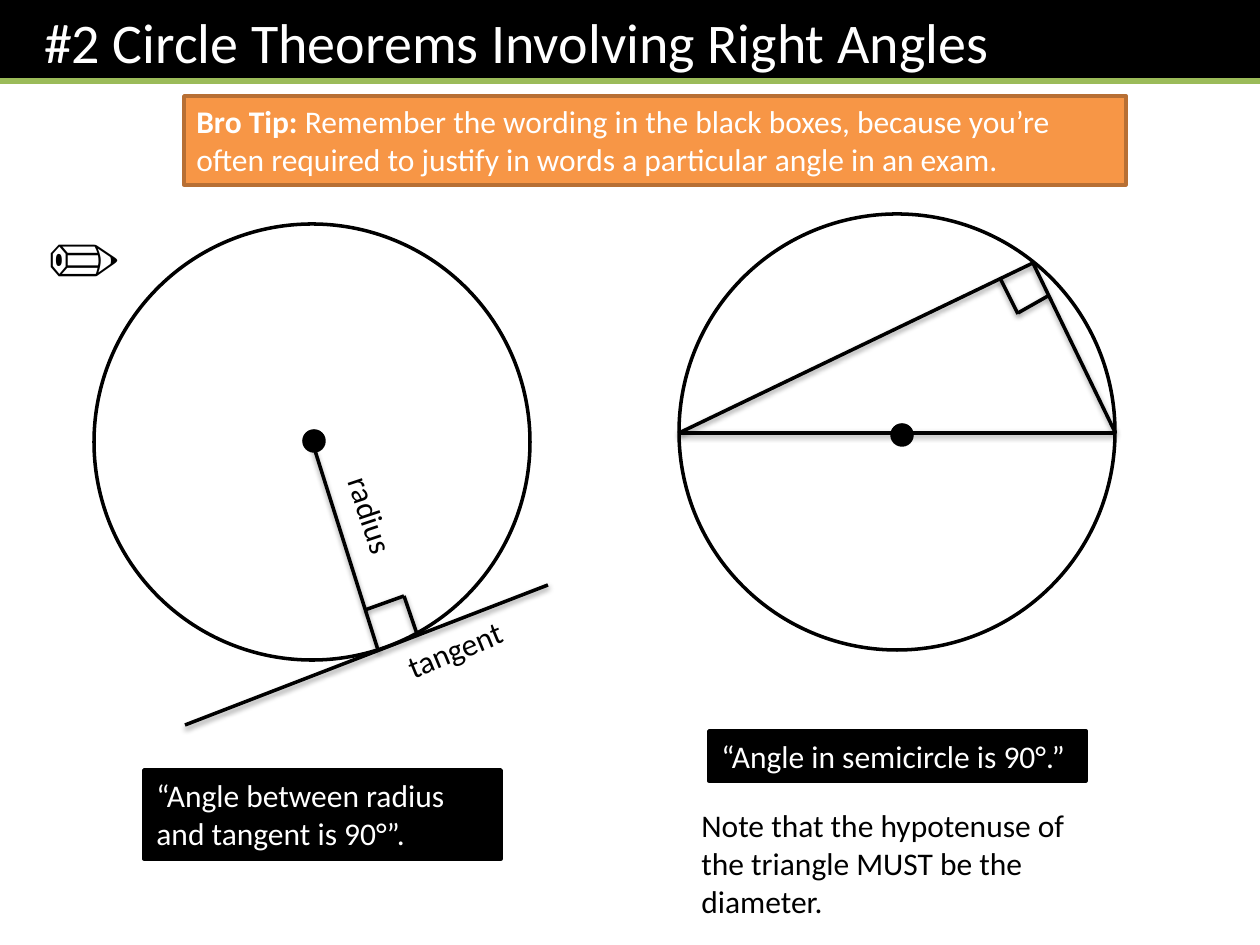
from pptx import Presentation
from pptx import util as u
from pptx.dml import color
from pptx.enum import shapes, text
from pptx.oxml import parse_xml
from pptx.oxml import ns

BLACK, WHITE, GREEN = "000000", "FFFFFF", "9BBB59"
ORANGE, BROWN = "F79646", "B76F34"
DIAMETER = 436
DOT = 20
SHADOW = (
    '<a:outerShdw blurRad="40000" dist="20000" dir="5400000" rotWithShape="0">'
    '<a:srgbClr val="000000"><a:alpha val="38000"/></a:srgbClr></a:outerShdw>'
)


def px(length):
    return u.Emu(round(length * 914400 / 126))


def box(*lengths):
    return [px(length) for length in lengths]


def rgb(value):
    return color.RGBColor.from_string(value)


def apply(target, values):
    for name, value in values.items():
        setattr(target, name, value)


def write(frame, runs, ink, size=18, font="Calibri", align=text.PP_ALIGN.LEFT,
          anchor=text.MSO_ANCHOR.TOP, indent=u.Inches(0.1)):
    apply(frame, {"word_wrap": True, "auto_size": text.MSO_AUTO_SIZE.NONE,
                  "vertical_anchor": anchor, "margin_left": indent})
    paragraph = frame.paragraphs[0]
    paragraph.alignment = align
    for words, bold in runs:
        run = paragraph.add_run()
        run.text = words
        apply(run.font, {"size": u.Pt(size), "name": font, "bold": bold})
        run.font.color.rgb = rgb(ink)


def add_filled(slide, kind, bounds, fill, outline):
    area = slide.shapes.add_shape(kind, *box(*bounds))
    area.shadow.inherit = False
    area.fill.solid()
    area.fill.fore_color.rgb = rgb(fill)
    area.line.color.rgb = rgb(outline)
    area.line.width = u.Pt(2)
    return area


def add_panel(slide, bounds, runs, fill=BLACK, outline=BLACK):
    panel = add_filled(slide, shapes.MSO_SHAPE.RECTANGLE, bounds, fill, outline)
    write(panel.text_frame, runs, WHITE)


def add_label(slide, bounds, words, rotation=0, **style):
    label = slide.shapes.add_textbox(*box(*bounds))
    label.rotation = rotation
    write(label.text_frame, [(words, False)], BLACK, **style)


def add_line(slide, start, end, ink=BLACK, width=2, effect=SHADOW):
    line = slide.shapes.add_connector(
        shapes.MSO_CONNECTOR.STRAIGHT, *box(*start, *end))
    line.line.color.rgb = rgb(ink)
    line.line.width = u.Pt(width)
    line._element.spPr.append(
        parse_xml(f'<a:effectLst {ns.nsdecls("a")}>{effect}</a:effectLst>'))


def add_circle(slide, left, top, segments, centre):
    oval = shapes.MSO_SHAPE.OVAL
    add_filled(slide, oval, (left, top, DIAMETER, DIAMETER), WHITE, BLACK)
    for x1, y1, x2, y2 in segments:
        add_line(slide, (left + x1, top + y1), (left + x2, top + y2))
    x, y = centre
    add_filled(slide, oval, (left + x, top + y, DOT, DOT), BLACK, BLACK)


def header(slide, left, top, width, height):
    title = slide.shapes.title
    apply(title, dict(zip(("left", "top", "width", "height"),
                          box(left, top, width, height))))
    title.fill.solid()
    title.fill.fore_color.rgb = rgb(BLACK)
    write(title.text_frame, [("#2 Circle Theorems Involving Right Angles", False)],
          WHITE, size=32, anchor=text.MSO_ANCHOR.MIDDLE, indent=px(44))
    rule = top + height - 2
    add_line(slide, (left, rule), (left + width, rule), GREEN, 3, "")


def tangent_theorem(slide, left, top):
    segments = [
        (284, 426, 218, 217),
        (91, 501, 454, 361),
        (271, 386, 310, 372),
        (323, 410, 310, 372),
    ]
    add_circle(slide, left, top, segments, (210, 207))
    for x, y, words, rotation in [(198, 266, "radius", 71.6),
                                  (281, 400, "tangent", 337.5)]:
        add_label(slide, (left + x, top + y, 159, 50), words, rotation,
                  align=text.PP_ALIGN.CENTER)
    add_panel(slide, (left + 50, top + 546, 357, 89),
              [("“Angle between radius and tangent is 90°”.", False)])


def semicircle_theorem(slide, left, top):
    segments = [
        (DIAMETER, 219, 0, 219),
        (354, 49, 0, 219),
        (354, 49, DIAMETER, 218),
        (321, 64, 339, 100),
        (369, 82, 339, 99),
    ]
    add_circle(slide, left, top, segments, (213, 211))
    add_panel(slide, (left + 30, top + 517, 377, 50),
              [("“Angle in semicircle is 90°.”", False)])
    add_label(slide, (left + 10, top + 586, 407, 127),
              "Note that the hypotenuse of the triangle MUST be the diameter.")


def main():
    deck = Presentation()
    apply(deck, {"slide_width": px(1260), "slide_height": px(945)})
    slide = deck.slides.add_slide(deck.slide_layouts[5])
    header(slide, 0, 0, 1260, 83)
    tangent_theorem(slide, 94, 224)
    add_label(slide, (35, 204, 129, 106), "✏", size=44, font="Arial")
    semicircle_theorem(slide, 679, 214)
    add_panel(slide, (184, 96, 942, 89),
              [("Bro Tip: ", True),
               ("Remember the wording in the black boxes, because you’re often "
                "required to justify in words a particular angle in an exam.", False)],
              ORANGE, BROWN)
    deck.save("out.pptx")


if __name__ == "__main__":
    main()
